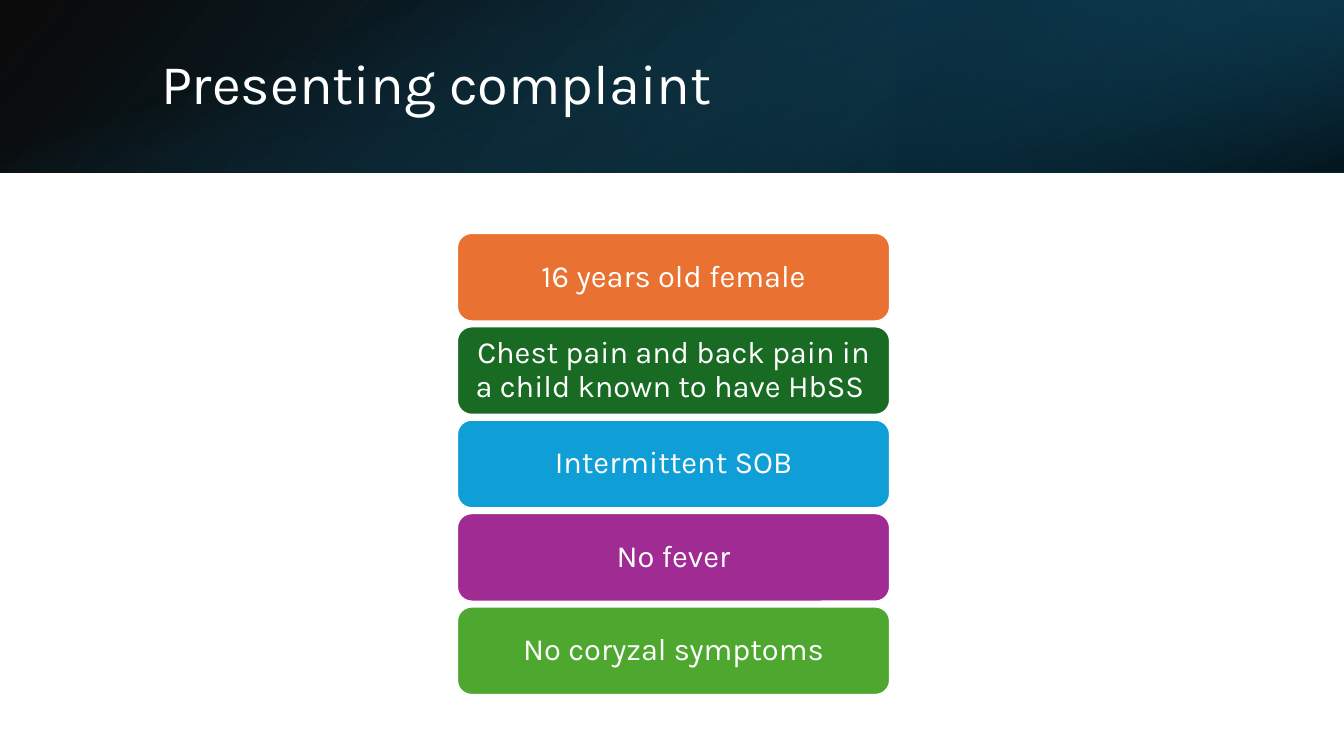
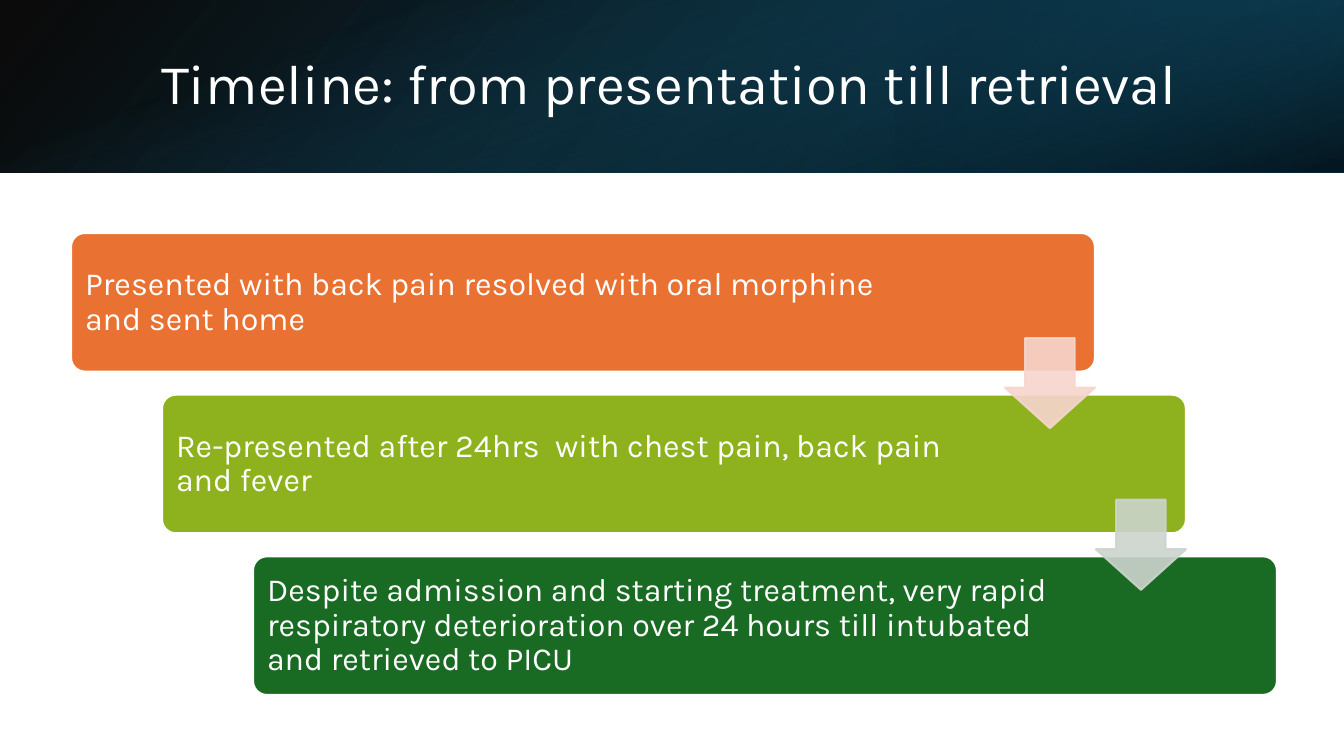
from dataclasses import dataclass
from pptx import Presentation
from pptx import util as u
from pptx.dml import color
from pptx.enum import shapes, text
from pptx.oxml import ns, parse_xml

SCALE = 914400 / 100.8


@dataclass(frozen=True)
class Theme:
    font: str = "Karla"
    head: int = 40
    card: int = 22
    step: int = 23
    edge: float = 1.5
    white: str = "FFFFFF"
    black: str = "000000"
    deep: str = "104862"
    navy: str = "0B3041"
    teal: str = "156082"
    orange: str = "E97132"
    green: str = "196B24"
    blue: str = "0F9ED5"
    purple: str = "A02B93"
    leaf: str = "4EA72E"
    lime: str = "8EB21E"
    pink: str = "F7D5CE"
    grey: str = "CCD4CD"


T = Theme()
KIND = shapes.MSO_SHAPE
ALIGN = text.PP_ALIGN
WIDE, HIGH = 1344, 756
BAND = (0, 0, WIDE, 173)
TITLE = (151, 38, 1107, 97)
STACK = (457, 233, 433, 462)
STAIR = (71, 233, 1206, 462)

CARDS = [
    ("16 years old female", T.orange),
    ("Chest pain and back pain in a child known to have HbSS ", T.green),
    ("Intermittent SOB", T.blue),
    ("No fever", T.purple),
    ("No coryzal symptoms", T.leaf),
]
STEPS = [
    ("Presented with back pain resolved with oral morphine and sent home",
     T.orange, 152),
    ("Re-presented after 24hrs  with chest pain, back pain and fever",
     T.lime, 190),
    ("Despite admission and starting treatment, very rapid respiratory "
     "deterioration over 24 hours till intubated and retrieved to PICU",
     T.green, 190),
]


def px(val):
    return u.Emu(round(val * SCALE))


def rgb(code):
    return color.RGBColor.from_string(code)


def write(shape, words, size, align=ALIGN.LEFT, pad=(10, 5, 10, 5)):
    frame = shape.text_frame
    frame.word_wrap = True
    frame.vertical_anchor = text.MSO_ANCHOR.MIDDLE
    (frame.margin_left, frame.margin_top,
     frame.margin_right, frame.margin_bottom) = map(px, pad)
    para = frame.paragraphs[0]
    para.alignment = align
    para.line_spacing = 0.9
    run = para.add_run()
    run.text = words
    run.font.name = T.font
    run.font.size = u.Pt(size)
    run.font.color.rgb = rgb(T.white)


def draw(slide, kind, box, fill=None, line=None, adj=()):
    shape = slide.shapes.add_shape(kind, *map(px, box))
    shape.shadow.inherit = False
    for i, val in enumerate(adj):
        shape.adjustments[i] = val
    if fill:
        shape.fill.solid()
        shape.fill.fore_color.rgb = rgb(fill)
    if line:
        shape.line.color.rgb = rgb(line)
        shape.line.width = u.Pt(T.edge)
    else:
        shape.line.fill.background()
    return shape


def fade(shape, part):
    for node in shape._element.spPr.iter(ns.qn("a:srgbClr")):
        node.append(parse_xml(
            f'<a:alpha {ns.nsdecls("a")} val="{part * 1000}"/>'))


def blend(shape, stops, angle):
    marks = "".join(
        f'<a:gs pos="{pos * 1000}"><a:srgbClr val="{code}">'
        f'<a:alpha val="{part * 1000}"/></a:srgbClr></a:gs>'
        for pos, code, part in stops)
    grad = parse_xml(
        f'<a:gradFill {ns.nsdecls("a")} rotWithShape="1">'
        f'<a:gsLst>{marks}</a:gsLst>'
        f'<a:lin ang="{angle * 60000}" scaled="0"/></a:gradFill>')
    shape._element.spPr.find(ns.qn("a:prstGeom")).addnext(grad)


def band(slide, box):
    x, y, w, h = box
    third = w // 3
    side = (x + (w - h) / 2, y - (w - h) / 2, h, w)
    layers = [
        (box, 0, True, 140, [(0, T.black, 96), (100, T.deep, 100)]),
        ((x + w - third, y, third, h), 180, True, 320,
         [(19, T.navy, 68), (100, T.teal, 79)]),
        (side, 90, False, 340, [(23, T.teal, 0), (99, T.black, 74)]),
    ]
    for area, turn, flip, angle, stops in layers:
        shape = draw(slide, KIND.RECTANGLE, area)
        shape.rotation = turn
        if flip:
            shape._element.spPr.find(ns.qn("a:xfrm")).set("flipH", "1")
        blend(shape, stops, angle)


def page(deck, title):
    slide = deck.slides.add_slide(deck.slide_layouts[6])
    band(slide, BAND)
    write(slide.shapes.add_textbox(*map(px, TITLE)), title, T.head)
    return slide


def stack(slide, box, cards, gap=5):
    x, y, w, h = box
    tall = (h - gap * (len(cards) - 1)) / len(cards)
    for i, (words, fill) in enumerate(cards):
        area = (x, y + i * (tall + gap), w, tall)
        card = draw(slide, KIND.ROUNDED_RECTANGLE, area, fill, T.white)
        write(card, words, T.card, ALIGN.CENTER, (9, 5, 9, 5))


def stair(slide, box, steps, tints, gap=23, wide=1024, size=90):
    x, y, w, h = box
    count = len(steps)
    tall = (h - gap * (count - 1)) / count
    shift = (w - wide) / (count - 1)
    for i, (words, fill, right) in enumerate(steps):
        area = (x + i * shift, y + i * (tall + gap), wide, tall)
        step = draw(slide, KIND.ROUNDED_RECTANGLE, area, fill, T.white, [0.1])
        write(step, words, T.step, pad=(10, 10, right, 10))
    for i, tint in enumerate(tints):
        mid = y + (i + 1) * (tall + gap) - gap / 2
        area = (x + i * shift + wide - size, mid - size / 2, size, size)
        arrow = draw(slide, KIND.DOWN_ARROW, area, tint, tint, [0.55, 0.45])
        fade(arrow, 90)


def main():
    deck = Presentation()
    deck.slide_width, deck.slide_height = px(WIDE), px(HIGH)
    stack(page(deck, "Presenting complaint"), STACK, CARDS)
    stair(page(deck, "Timeline: from presentation till retrieval"),
          STAIR, STEPS, [T.pink, T.grey])
    deck.save("out.pptx")


if __name__ == "__main__":
    main()
